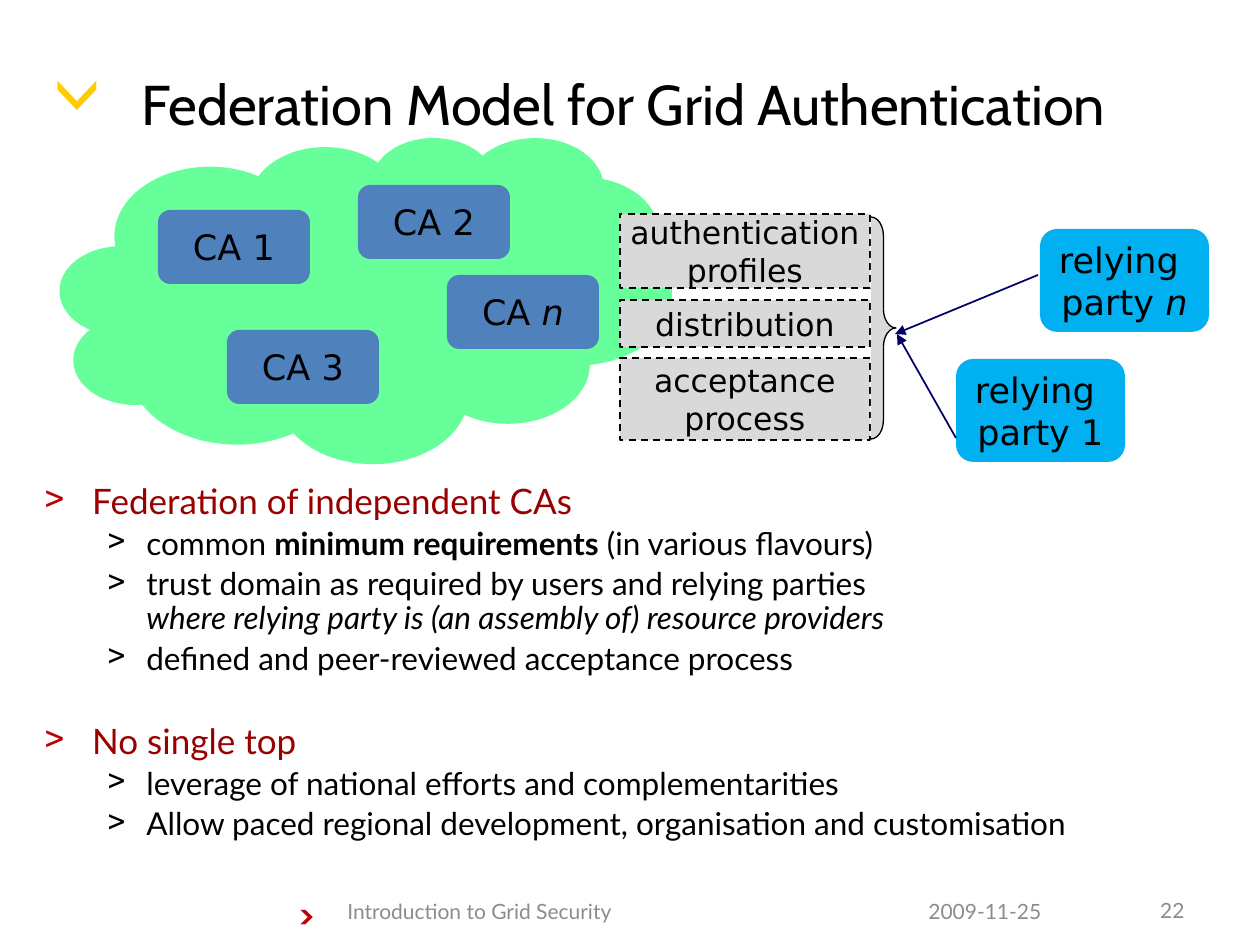
from pptx import Presentation
from pptx.dml.color import RGBColor as RGB
from pptx.enum.dml import MSO_LINE as Dash
from pptx.enum.shapes import MSO_CONNECTOR as Conn, MSO_SHAPE as Kind
from pptx.enum.text import MSO_ANCHOR as Anchor, PP_ALIGN as Align
from pptx.oxml.ns import qn
from pptx.util import Emu, Inches, Pt
from lxml.etree import SubElement as Sub

BLACK = RGB(0x00, 0x00, 0x00)
GRAY = RGB(0x8C, 0x8C, 0x8C)
LIGHT = RGB(0xD9, 0xD9, 0xD9)
RED = RGB(0xC0, 0x00, 0x00)
DARK = RGB(0x99, 0x00, 0x00)
GOLD = RGB(0xFF, 0xCC, 0x00)
GREEN = RGB(0x66, 0xFF, 0x99)
BLUE = RGB(0x4F, 0x81, 0xBD)
SKY = RGB(0x00, 0xB0, 0xF0)
NAVY = RGB(0x00, 0x00, 0x66)

HEAD, BODY, LABEL = "Cabin", "Lato", "DejaVu Sans"


def px(*vals):
    return [Emu(round(v * 914400 / 126)) for v in vals]


class Deck:
    def __init__(self):
        self.prs = Presentation()
        self.prs.slide_width, self.prs.slide_height = Inches(10), Inches(7.5)
        self.slide = self.prs.slides.add_slide(self.prs.slide_layouts[5])
        self.shapes = self.slide.shapes

    def runs(self, para, parts, font, size, color):
        """Add (text, style) parts; style is "", "b" or "i"."""
        for text, style in parts:
            for num, line in enumerate(text.split("\n")):
                if num:
                    para.add_line_break()
                if not line:
                    continue
                run = para.add_run()
                run.text = line
                run.font.name, run.font.size = font, Pt(size)
                run.font.color.rgb = color
                run.font.bold, run.font.italic = style == "b", style == "i"

    def title(self, box, text):
        shape = self.shapes.title
        shape.left, shape.top, shape.width, shape.height = px(*box)
        frame = shape.text_frame
        frame.vertical_anchor = Anchor.MIDDLE
        para = frame.paragraphs[0]
        para.alignment = Align.LEFT
        self.runs(para, [(text, "")], HEAD, 32, BLACK)

    def text(self, box, text, font, size, color, style="",
             align=Align.LEFT, anchor=Anchor.MIDDLE, turn=0):
        shape = self.shapes.add_textbox(*px(*box))
        shape.rotation = turn
        frame = shape.text_frame
        frame.word_wrap = True
        frame.vertical_anchor = anchor
        para = frame.paragraphs[0]
        para.alignment = align
        self.runs(para, [(text, style)], font, size, color)

    def bullets(self, box, items):
        """Add (level, space before, parts) items."""
        frame = self.shapes.add_textbox(*px(*box)).text_frame
        frame.word_wrap = True
        for num, (level, gap, parts) in enumerate(items):
            para = frame.add_paragraph() if num else frame.paragraphs[0]
            left, hang, size, color, mark = (
                (0.81, 0.31, 18, BLACK, BLACK) if level
                else (0.38, 0.38, 20, DARK, RED))
            para.level = level
            para.line_spacing = 0.9
            para.space_before = Pt(gap)
            props = para._p.get_or_add_pPr()
            props.set("marL", str(Inches(left)))
            props.set("indent", str(-Inches(hang)))
            tint = Sub(props, qn("a:buClr"))
            Sub(tint, qn("a:srgbClr"), val=str(mark))
            Sub(props, qn("a:buChar"), char=">")
            self.runs(para, parts, BODY, size, color)

    def shape(self, kind, box, fill, parts=(), size=20, line=0,
              dash=None, adj=()):
        shape = self.shapes.add_shape(kind, *px(*box))
        shape.shadow.inherit = False
        for num, val in enumerate(adj):
            shape.adjustments[num] = val
        shape.fill.solid()
        shape.fill.fore_color.rgb = fill
        if line:
            shape.line.color.rgb = BLACK
            shape.line.width = Pt(line)
            if dash:
                shape.line.dash_style = dash
        else:
            shape.line.fill.background()
        frame = shape.text_frame
        frame.word_wrap = False
        frame.vertical_anchor = Anchor.MIDDLE
        para = frame.paragraphs[0]
        para.alignment = Align.CENTER
        self.runs(para, parts, LABEL, size, BLACK)

    def arrow(self, *ends):
        conn = self.shapes.add_connector(Conn.STRAIGHT, *px(*ends))
        conn.line.color.rgb = NAVY
        conn.line.width = Pt(1)
        Sub(conn.line._get_or_add_ln(), qn("a:tailEnd"), type="triangle")
        Sub(conn._element.spPr, qn("a:effectLst"))


def main():
    deck = Deck()

    # Corner marks
    deck.text((286, 886, 59, 55), ">", HEAD, 20, RED, "b", anchor=Anchor.TOP)
    deck.text((58, 29, 59, 127), ">", HEAD, 54, GOLD, anchor=Anchor.TOP, turn=90)

    # Footer
    deck.text((916, 896, 147, 30), "2009-11-25", BODY, 12, GRAY)
    deck.text((335, 896, 452, 30), "Introduction to Grid Security", BODY, 12, GRAY)
    deck.text((1131, 896, 66, 29), "22", BODY, 12, GRAY, align=Align.RIGHT)

    # Title and bullets
    deck.title((129, 48, 1068, 110), "Federation Model for Grid Authentication")
    deck.bullets((32, 478, 1207, 394), [
        (0, 0, [("Federation of independent CAs", "")]),
        (1, 3.6, [("common ", ""), ("minimum requirements", "b"),
                  (" (in various flavours)", "")]),
        (1, 3.6, [("trust domain as required by users and relying parties\n", ""),
                  ("where relying party is (an assembly of) resource providers", "i")]),
        (1, 3.6, [("defined and peer-reviewed acceptance process", "")]),
        (0, 27, [("No single top", "")]),
        (1, 3.6, [("leverage of national efforts and complementarities", "")]),
        (1, 3.6, [("Allow paced regional development, organisation and customisation", "")]),
    ])

    # Cloud of authorities
    deck.shape(Kind.CLOUD_CALLOUT, (60, 137, 612, 326), GREEN, adj=(0.05, 0))
    for x, y, name, style in ((158, 210, "1", ""), (358, 185, "2", ""),
                              (227, 330, "3", ""), (447, 275, "n", "i")):
        deck.shape(Kind.ROUNDED_RECTANGLE, (x, y, 152, 74), BLUE,
                   [("CA ", ""), (name, style)])

    # Shared rules
    for y, high, text in ((214, 74, "authentication\nprofiles"),
                          (300, 47, "distribution"),
                          (358, 82, "acceptance\nprocess")):
        deck.shape(Kind.RECTANGLE, (620, y, 250, high), LIGHT, [(text, "")],
                   size=18, line=1, dash=Dash.DASH)

    # Relying parties
    for x, y, name, style in ((956, 359, "1", ""), (1040, 229, "n", "i")):
        deck.shape(Kind.ROUNDED_RECTANGLE, (x, y, 169, 103), SKY,
                   [("relying \nparty ", ""), (name, style)])

    # Brace and arrows
    deck.arrow(956, 438, 897, 334)
    deck.shape(Kind.RIGHT_BRACE, (871, 217, 25, 222), LIGHT, line=0.75,
               adj=(0.75, 0.5))
    deck.arrow(1038, 275, 895, 334)

    deck.prs.save("out.pptx")


if __name__ == "__main__":
    main()
